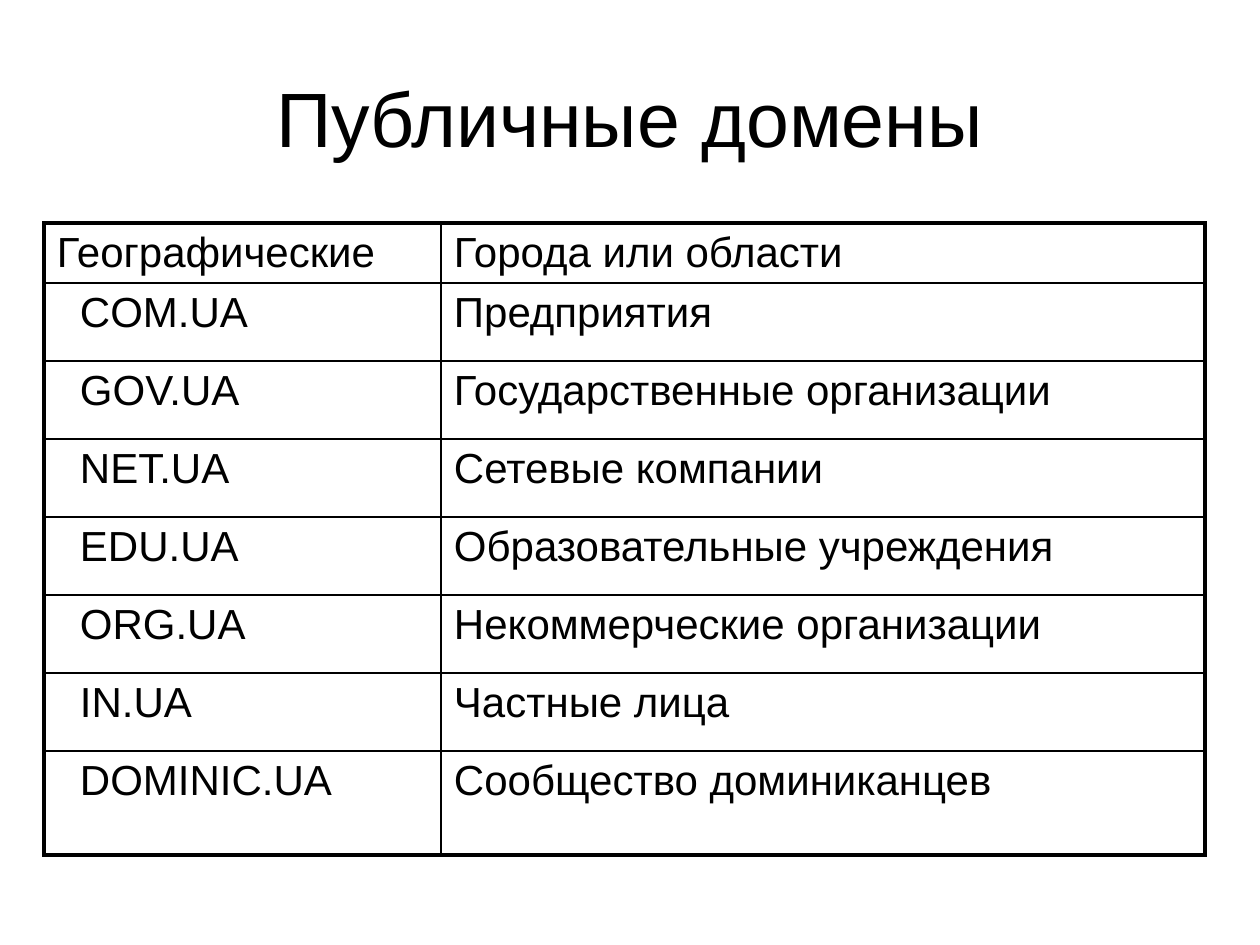
from dataclasses import dataclass

from lxml.etree import SubElement
from pptx import Presentation
from pptx.dml.color import RGBColor
from pptx.enum.text import MSO_ANCHOR as Anchor, PP_ALIGN as Align
from pptx.oxml.ns import qn
from pptx.util import Emu, Pt


@dataclass(frozen=True)
class Theme:
    """Colours, font, type sizes and line widths of the slide."""
    ink: str = "000000"
    paper: str = "FFFFFF"
    font: str = "Arial"
    title_size: int = 44
    body_size: int = 24
    outer_line: float = 2.25
    inner_line: float = 1


THEME = Theme()
PX_PER_INCH = 126
SLIDE_SIZE = (1260, 945)
TITLE_BOX = (63, 38, 1134, 158)
TABLE_BOX = (44, 223, 1161, 632)
FIRST_COLUMN = 397
HEADER_HEIGHT = 60
LAST_HEIGHT = 104
CELL_MARGIN = 13
DOMAIN_MARGIN = 36

TITLE = "Публичные домены"
DOMAINS = [
    ("Географические", "Города или области"),
    ("COM.UA", "Предприятия"),
    ("GOV.UA", "Государственные организации"),
    ("NET.UA", "Сетевые компании"),
    ("EDU.UA", "Образовательные учреждения"),
    ("ORG.UA", "Некоммерческие организации"),
    ("IN.UA", "Частные лица"),
    ("DOMINIC.UA", "Сообщество доминиканцев"),
]


def px(length):
    """Turn pixels into EMU."""
    return Emu(round(length * 914400 / PX_PER_INCH))


def write_text(frame, text, size=THEME.body_size, align=Align.LEFT):
    """Write one formatted paragraph into a text frame."""
    paragraph = frame.paragraphs[0]
    paragraph.alignment = align
    run = paragraph.add_run()
    run.text = text
    run.font.name = THEME.font
    run.font.size = Pt(size)
    run.font.color.rgb = RGBColor.from_string(THEME.ink)


def set_borders(cell, outer_sides):
    """Draw the four cell borders, thicker on the outer sides."""
    properties = cell._tc.get_or_add_tcPr()
    for index, side in enumerate("LRTB"):
        width = THEME.outer_line if side in outer_sides else THEME.inner_line
        line = SubElement(properties, qn(f"a:ln{side}"), w=str(Pt(width)))
        fill = SubElement(line, qn("a:solidFill"))
        SubElement(fill, qn("a:srgbClr"), val=THEME.ink)
        properties.insert(index, line)


def add_title(slide, box):
    """Place and format the title placeholder."""
    title = slide.shapes.title
    title.left, title.top, title.width, title.height = map(px, box)
    title.text_frame.vertical_anchor = Anchor.MIDDLE
    write_text(title.text_frame, TITLE, size=THEME.title_size, align=Align.CENTER)


def add_domain_table(slide, box):
    """Build the table of domains inside the box."""
    width, height = box[2:]
    last = len(DOMAINS) - 1
    table = slide.shapes.add_table(len(DOMAINS), 2, *map(px, box)).table
    table.first_row = table.horz_banding = False

    table.columns[0].width = px(FIRST_COLUMN)
    table.columns[1].width = px(width - FIRST_COLUMN)
    middle_height = (height - HEADER_HEIGHT - LAST_HEIGHT) / (last - 1)
    heights = [HEADER_HEIGHT] + [middle_height] * (last - 1) + [LAST_HEIGHT]

    for row, texts in enumerate(DOMAINS):
        table.rows[row].height = px(heights[row])
        for column, text in enumerate(texts):
            cell = table.cell(row, column)
            cell.fill.background()
            cell.vertical_anchor = Anchor.TOP
            is_domain = row > 0 and column == 0
            cell.margin_left = px(DOMAIN_MARGIN if is_domain else CELL_MARGIN)
            write_text(cell.text_frame, text)
            outer_sides = "LR"[column] + {0: "T", last: "B"}.get(row, "")
            set_borders(cell, outer_sides)


def main():
    """Build and save the presentation."""
    presentation = Presentation()
    presentation.slide_width, presentation.slide_height = map(px, SLIDE_SIZE)
    slide = presentation.slides.add_slide(presentation.slide_layouts[5])
    slide.background.fill.solid()
    slide.background.fill.fore_color.rgb = RGBColor.from_string(THEME.paper)
    add_title(slide, TITLE_BOX)
    add_domain_table(slide, TABLE_BOX)
    presentation.save("out.pptx")


if __name__ == "__main__":
    main()
